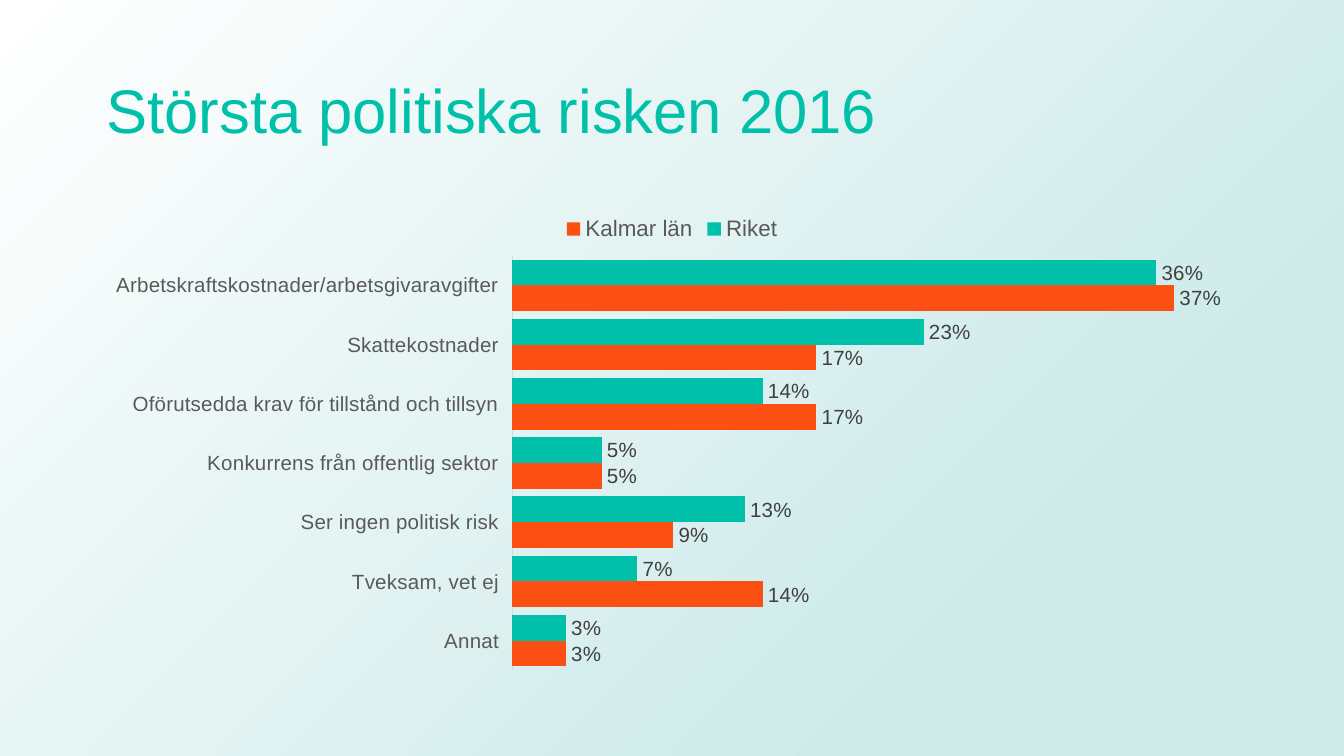
from lxml.etree import SubElement as Sub
from pptx import Presentation
from pptx.chart.data import CategoryChartData as Data
from pptx.dml.color import RGBColor
from pptx.enum.chart import XL_CHART_TYPE as Kind, XL_LABEL_POSITION as Spot
from pptx.enum.chart import XL_LEGEND_POSITION as Place, XL_TICK_LABEL_POSITION as Label
from pptx.enum.chart import XL_TICK_MARK as Tick
from pptx.enum.shapes import MSO_SHAPE as Shape
from pptx.enum.text import MSO_ANCHOR as Anchor, PP_ALIGN as Align
from pptx.oxml.ns import qn
from pptx.util import Pt

SCALE = 914400 / 134.4
WIDE, HIGH = 1344, 756
TEAL = RGBColor(0x00, 0xC0, 0xA9)
ORANGE = RGBColor(0xFB, 0x4F, 0x14)
MIST = RGBColor(0xCD, 0xEA, 0xE9)
WHITE = RGBColor(0xFF, 0xFF, 0xFF)
BLACK = RGBColor(0x00, 0x00, 0x00)
DARK = RGBColor(0x40, 0x40, 0x40)
GREY = RGBColor(0x59, 0x59, 0x59)
PALE = RGBColor(0xD9, 0xD9, 0xD9)

RISKS = [
    ("Arbetskraftskostnader/arbetsgivaravgifter", 0.36, 0.37),
    ("Skattekostnader", 0.23, 0.17),
    ("Oförutsedda krav för tillstånd och tillsyn", 0.14, 0.17),
    ("Konkurrens från offentlig sektor", 0.05, 0.05),
    ("Ser ingen politisk risk", 0.13, 0.09),
    ("Tveksam, vet ej", 0.07, 0.14),
    ("Annat", 0.03, 0.03),
]


def px(num):
    """Turn pixels into EMU."""
    return round(num * SCALE)


def style(font, size, color, face="Arial"):
    """Set the size, colour and face of a font."""
    font.size = Pt(size)
    font.color.rgb = color
    font.name = face


def write(frame, text, size=18, color=BLACK, align=Align.LEFT, anchor=Anchor.MIDDLE, space=1.0):
    """Put one formatted paragraph in a text frame."""
    frame.word_wrap = True
    frame.vertical_anchor = anchor
    para = frame.paragraphs[0]
    para.alignment = align
    para.line_spacing = space
    run = para.add_run()
    run.text = text
    style(run.font, size, color)


def add_back(slide, box):
    """Lay a radial gradient behind everything else."""
    rect = slide.shapes.add_shape(Shape.RECTANGLE, *map(px, box))
    rect.shadow.inherit = False
    rect.line.fill.background()
    rect.fill.gradient()
    grad = rect._element.spPr.find(qn("a:gradFill"))
    for part in list(grad):
        grad.remove(part)
    stops = Sub(grad, qn("a:gsLst"))
    for pos, color in ((23, MIST), (100, WHITE)):
        stop = Sub(stops, qn("a:gs"), pos=str(pos * 1000))
        Sub(stop, qn("a:srgbClr"), val=str(color))
    path = Sub(grad, qn("a:path"), path="circle")
    Sub(path, qn("a:fillToRect"), l="100000", t="100000")
    Sub(grad, qn("a:tileRect"), r="-100000", b="-100000")
    slide.shapes._spTree.insert(2, rect._element)


def add_title(slide, box, text):
    """Move the title placeholder and fill it."""
    title = slide.shapes.title
    title.left, title.top, title.width, title.height = map(px, box)
    write(title.text_frame, text, size=33, color=TEAL, space=0.9)


def add_bars(slide, box):
    """Add the clustered bars that compare the county with the nation."""
    names, nation, county = zip(*RISKS)
    data = Data(number_format="0%")
    data.categories = names
    data.add_series("Riket", nation)
    data.add_series("Kalmar län", county)
    chart = slide.shapes.add_chart(Kind.BAR_CLUSTERED, *map(px, box), data).chart
    style(chart.font, 10, BLACK, "Calibri")
    chart.has_title = False
    chart.has_legend = True
    chart.legend.position = Place.TOP
    chart.legend.include_in_layout = False
    style(chart.legend.font, 12, GREY)

    axis = chart.category_axis
    axis.reverse_order = True
    axis.major_tick_mark = axis.minor_tick_mark = Tick.NONE
    axis.tick_label_position = Label.LOW
    axis.format.line.color.rgb = PALE
    axis.format.line.width = Pt(0.75)
    style(axis.tick_labels.font, 11, GREY)

    scale = chart.value_axis
    scale.visible = False
    scale.has_major_gridlines = False
    scale.minimum_scale, scale.maximum_scale = 0, 0.4

    plot = chart.plots[0]
    plot.gap_width, plot.overlap = 30, 0
    plot.vary_by_categories = False
    for bars, color in zip(plot.series, (TEAL, ORANGE)):
        bars.format.fill.solid()
        bars.format.fill.fore_color.rgb = color
        labels = bars.data_labels
        labels.show_value = True
        labels.number_format = "0%"
        labels.number_format_is_linked = False
        labels.position = Spot.OUTSIDE_END
        style(labels.font, 11, DARK)


def main():
    """Build and save the slide."""
    deck = Presentation()
    deck.slide_width, deck.slide_height = px(WIDE), px(HIGH)
    slide = deck.slides.add_slide(deck.slide_layouts[5])
    add_back(slide, (0, 0, WIDE, HIGH))
    add_title(slide, (93, 40, 1158, 147), "Största politiska risken 2016")
    add_bars(slide, (93, 202, 1158, 478))
    deck.save("out.pptx")


if __name__ == "__main__":
    main()
